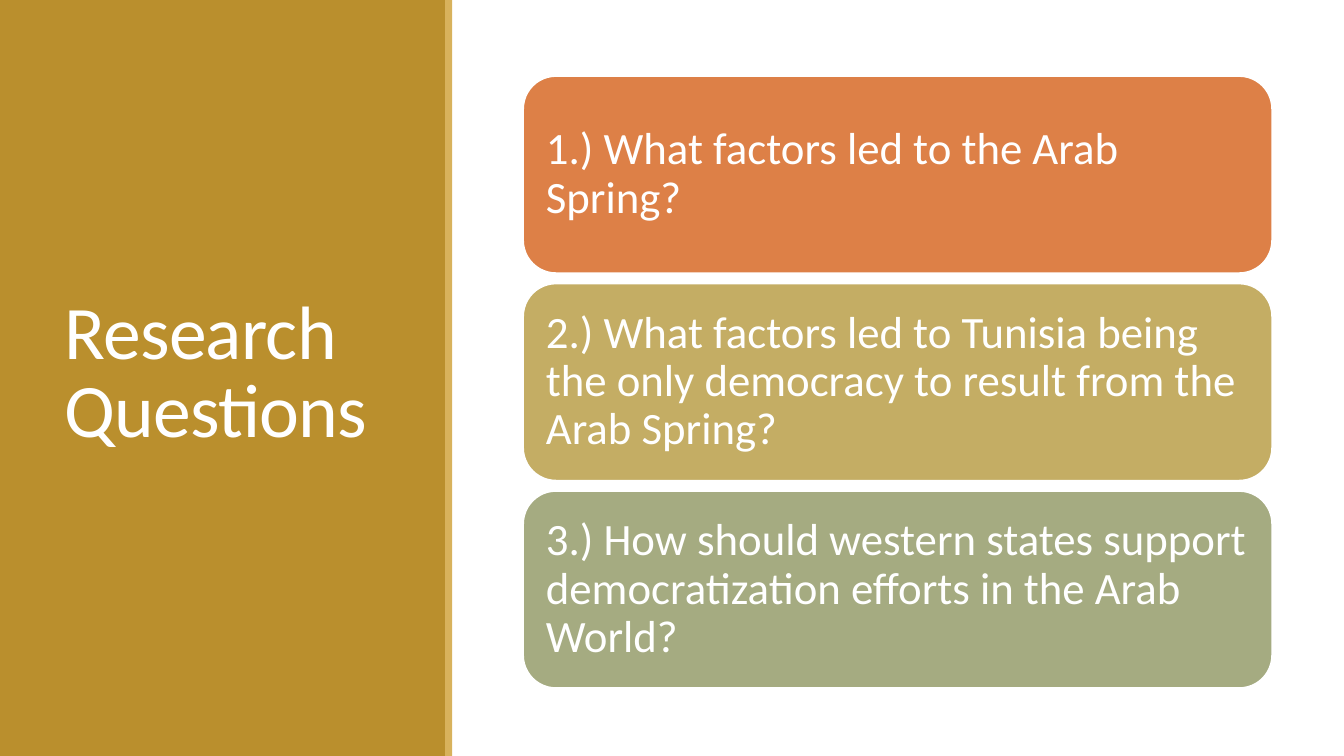
from pptx import Presentation
from pptx.dml.color import RGBColor
from pptx.enum.shapes import MSO_SHAPE as SHAPE
from pptx.enum.text import MSO_ANCHOR as ANCHOR, PP_ALIGN as ALIGN
from pptx.util import Pt

FONT = "Calibri"
WHITE = "FFFFFF"
CARD_LEFT, CARD_TOP, CARD_WIDTH, CARD_HEIGHT = 373.7, 54.3, 535, 140.8
CARD_STEP = 148.2
QUESTIONS = [
    ("1.) What factors led to the Arab Spring?", "DD8047"),
    ("2.) What factors led to Tunisia being the only democracy "
     "to result from the Arab Spring?", "C4AD64"),
    ("3.) How should western states support democratization "
     "efforts in the Arab World?", "A5AB81"),
]


def rgb(value):
    return RGBColor.from_string(value)


def add_box(slide, kind, left, top, width, height, fill):
    sp = slide.shapes.add_shape(kind, Pt(left), Pt(top), Pt(width), Pt(height))
    sp.shadow.inherit = False
    sp.fill.solid()
    sp.fill.fore_color.rgb = rgb(fill)
    sp.line.fill.background()
    return sp


def write(sp, text, size, line_spacing):
    """Fill a shape with one left-aligned, vertically centred paragraph."""
    tf = sp.text_frame
    tf.word_wrap = True
    tf.vertical_anchor = ANCHOR.MIDDLE
    tf.text = text
    p = tf.paragraphs[0]
    p.alignment = ALIGN.LEFT
    p.line_spacing = line_spacing
    r = p.runs[0]
    r.font.name = FONT
    r.font.size = Pt(size)
    r.font.color.rgb = rgb(WHITE)
    return r


def add_title(slide, text):
    sp = slide.shapes.add_textbox(Pt(38.9), Pt(41), Pt(242.6), Pt(454.3))
    r = write(sp, text, 54, 0.85)
    r.font._element.set("spc", "-50")


def add_card(slide, top, text, fill):
    sp = add_box(slide, SHAPE.ROUNDED_RECTANGLE,
                 CARD_LEFT, top, CARD_WIDTH, CARD_HEIGHT, fill)
    sp.line.color.rgb = rgb(WHITE)
    sp.line.width = Pt(1.25)
    write(sp, text, 32, 0.9)
    tf = sp.text_frame
    tf.margin_left = tf.margin_right = Pt(9.4)
    tf.margin_top = tf.margin_bottom = Pt(9.4)


def main():
    prs = Presentation()
    prs.slide_width, prs.slide_height = Pt(960), Pt(540)
    slide = prs.slides.add_slide(prs.slide_layouts[6])
    add_box(slide, SHAPE.RECTANGLE, 0, 0, 319, 540, "BA8F2D")
    add_box(slide, SHAPE.RECTANGLE, 318, 0, 5, 540, "D8B25C")
    add_title(slide, "Research Questions")
    for i, (text, fill) in enumerate(QUESTIONS):
        add_card(slide, CARD_TOP + i * CARD_STEP, text, fill)
    prs.save("out.pptx")


if __name__ == "__main__":
    main()
